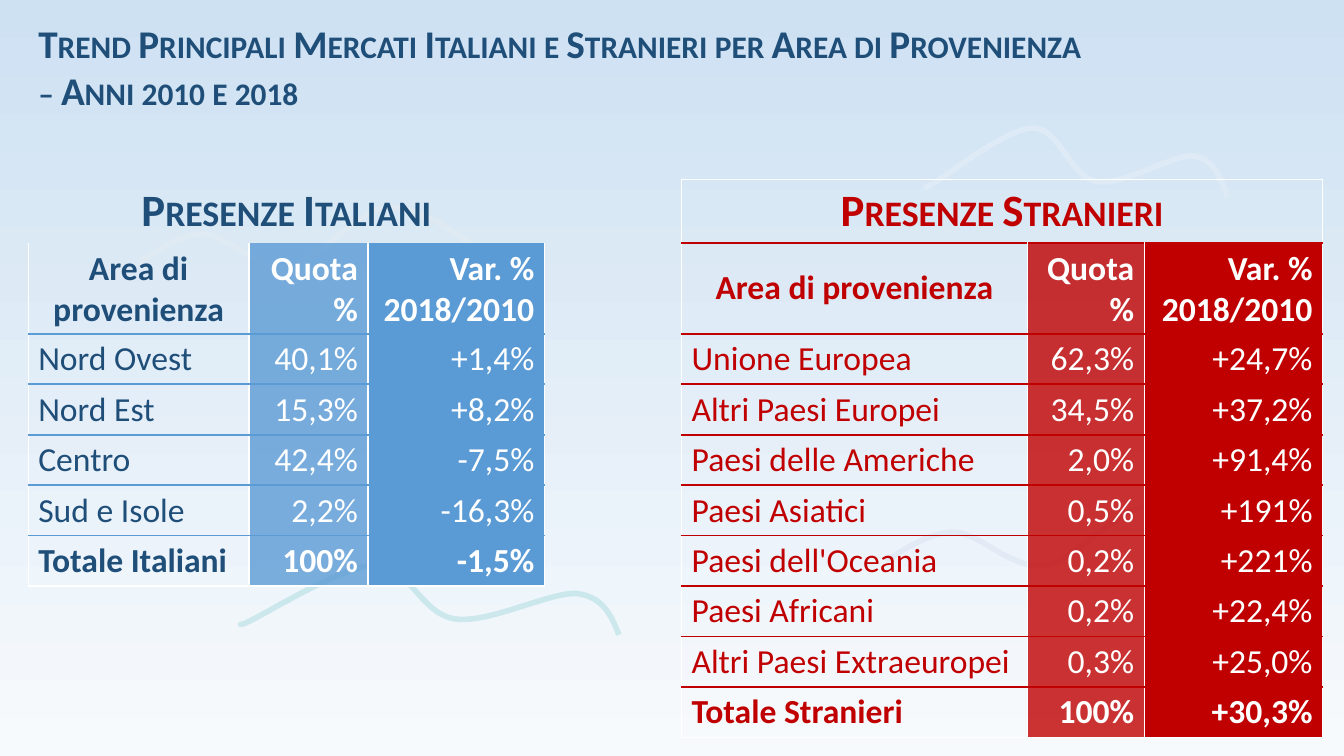
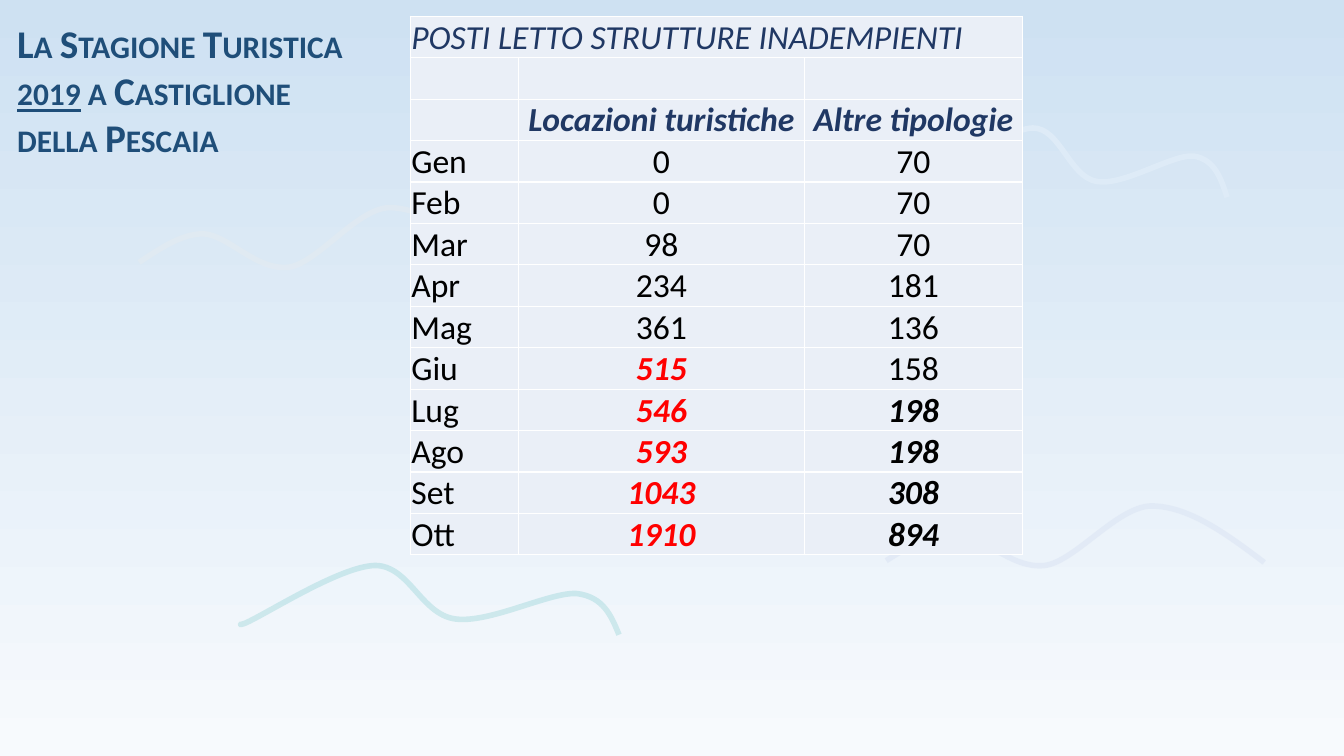
import pptx
import pptx.util
import pptx.dml.color
import pptx.enum.text
import pptx.oxml
import pptx.oxml.ns

C = {"navy": "1F4E79", "indigo": "203864", "blue": "5B9BD5", "crimson": "C00000",
     "red": "FF0000", "black": "000000", "white": "FFFFFF", "cell": "EAEFF7",
     "sky": "CEE1F2", "mist": "F7FAFD", "grey": "EDEDED", "lilac": "DAE3F3",
     "teal": "009999", "ice": "DEEBF7"}
FONT = "Calibri"
W, H = pptx.util.Inches(13.33), pptx.util.Inches(7.5)
LEFT, CENTER, RIGHT = (pptx.enum.text.PP_ALIGN.LEFT, pptx.enum.text.PP_ALIGN.CENTER,
                       pptx.enum.text.PP_ALIGN.RIGHT)
TOP, MIDDLE, BOTTOM = (pptx.enum.text.MSO_ANCHOR.TOP, pptx.enum.text.MSO_ANCHOR.MIDDLE,
                       pptx.enum.text.MSO_ANCHOR.BOTTOM)

# Curves in percent of their box: a start, then three points for each Bezier arc
GENTLE = [(0, 92), (6, 68), (12, 44), (18, 44), (25, 46), (33, 107), (42, 100),
          (50, 93), (61, 2), (70, 0), (80, 0), (90, 47), (100, 95)]
STEEP = [(1, 85), (0, 88), (2, 84), (2, 84), (8, 69), (27, 1), (36, 0), (45, 0),
         (48, 71), (57, 78), (66, 85), (82, 38), (89, 41), (96, 46), (98, 74), (100, 101)]
# Curve, box in percent of the slide, colour, opacity
WAVES = [(GENTLE, (10.35, 27.47, 26.56, 7.87), "grey", 30),
         (GENTLE, (65.94, 66.93, 28.13, 7.87), "lilac", 50),
         (STEEP, (17.7, 74.8, 28.36, 9.07), "teal", 15),
         (STEEP, (68.72, 16.93, 22.58, 9.07), "ice", 100)]

ITALIANS = [("Nord Ovest", "40,1%", "+1,4%"), ("Nord Est", "15,3%", "+8,2%"),
            ("Centro", "42,4%", "-7,5%"), ("Sud e Isole", "2,2%", "-16,3%"),
            ("Totale Italiani", "100%", "-1,5%")]
FOREIGNERS = [("Unione Europea", "62,3%", "+24,7%"), ("Altri Paesi Europei", "34,5%", "+37,2%"),
              ("Paesi delle Americhe", "2,0%", "+91,4%"), ("Paesi Asiatici", "0,5%", "+191%"),
              ("Paesi dell'Oceania", "0,2%", "+221%"), ("Paesi Africani", "0,2%", "+22,4%"),
              ("Altri Paesi Extraeuropei", "0,3%", "+25,0%"),
              ("Totale Stranieri", "100%", "+30,3%")]
BEDS = [("Gen", 0, 70), ("Feb", 0, 70), ("Mar", 98, 70), ("Apr", 234, 181),
        ("Mag", 361, 136), ("Giu", 515, 158), ("Lug", 546, 198), ("Ago", 593, 198),
        ("Set", 1043, 308), ("Ott", 1910, 894)]


def rgb(name):
    return pptx.dml.color.RGBColor.from_string(C[name])


def place(box):
    """Turn percent of the slide into EMU."""
    return [round(v * side / 100) for v, side in zip(box, (W, H, W, H))]


def set_alpha(element, percent):
    for color in element.iter(pptx.oxml.ns.qn("a:srgbClr")):
        alpha = color.makeelement(pptx.oxml.ns.qn("a:alpha"), {"val": str(percent * 1000)})
        color.append(alpha)


def add_text(p, text, size=24, color="navy", bold=False, italic=False,
             underline=False, caps=False, align=LEFT):
    p.alignment = align
    r = p.add_run()
    r.text = text
    f = r.font
    f.name, f.size, f.bold, f.italic = FONT, pptx.util.Pt(size), bold, italic
    f.underline = underline
    f.color.rgb = rgb(color)
    if caps:
        r._r.get_or_add_rPr().set("cap", "small")


# Shared look: background and waves on the master
def add_background(master):
    fill = master.background.fill
    fill.gradient()
    fill.gradient_angle = 90
    for stop, name in zip(fill.gradient_stops, ("mist", "sky")):
        stop.color.rgb = rgb(name)


def curve_segments(element):
    """Turn each three straight segments into one Bezier arc."""
    segments = list(element.iter(pptx.oxml.ns.qn("a:lnTo")))
    for k in range(0, len(segments), 3):
        first, *others = segments[k:k + 3]
        arc = first.makeelement(pptx.oxml.ns.qn("a:cubicBezTo"), {})
        first.addprevious(arc)
        for segment in (first, *others):
            arc.append(segment[0])
            segment.getparent().remove(segment)


def add_wave(s, curve, box, color, opacity):
    x, y, w, h = place(box)
    start, *rest = [(round(x + px * w / 100), round(y + py * h / 100)) for px, py in curve]
    builder = s.shapes.build_freeform(*start)
    builder.add_line_segments(rest, close=False)
    sp = builder.convert_to_shape()
    curve_segments(sp.element)
    sp.shadow.inherit = False
    sp.fill.background()
    sp.line.color.rgb = rgb(color)
    sp.line.width = pptx.util.Pt(4)
    if opacity < 100:
        set_alpha(sp.element, opacity)
    return sp


def add_waves(s, master):
    for n, wave in enumerate(WAVES):
        sp = add_wave(s, *wave)
        sp.element.nvSpPr.cNvPr.id = 20 + n
        master.shapes.element.append(sp.element)


def set_title(s, box, paragraphs):
    """Each paragraph is a list of (text, underlined) runs."""
    sp = s.shapes.title
    sp.left, sp.top, sp.width, sp.height = place(box)
    tf = sp.text_frame
    tf.word_wrap = True
    tf.vertical_anchor = TOP
    tf.auto_size = pptx.enum.text.MSO_AUTO_SIZE.SHAPE_TO_FIT_TEXT
    for n, runs in enumerate(paragraphs):
        p = tf.add_paragraph() if n else tf.paragraphs[0]
        for text, underline in runs:
            add_text(p, text, size=28, bold=True, caps=True, underline=underline)


# Tables
def add_grid(s, box, cols, rows):
    """Add a plain table whose columns and rows share the box by weight."""
    x, y, w, h = place(box)
    table = s.shapes.add_table(len(rows), len(cols), x, y, w, h).table
    table.first_row = table.horz_banding = False
    for col, weight in zip(table.columns, cols):
        col.width = round(w * weight / sum(cols))
    for row, weight in zip(table.rows, rows):
        row.height = round(h * weight / sum(rows))
    table.cell(0, 0).merge(table.cell(0, len(cols) - 1))
    return table


def style_cell(cell, edges, fill=None, opacity=100, anchor=TOP):
    """Edges maps L, R, T, B to (colour, points); a missing side has no line."""
    tcPr = cell._tc.get_or_add_tcPr()
    for side in "LRTB":
        color, width = edges.get(side, (None, 0))
        paint = (f'<a:solidFill><a:srgbClr val="{C[color]}"/></a:solidFill>'
                 if color else "<a:noFill/>")
        tcPr.append(pptx.oxml.parse_xml(
            f'<a:ln{side} {pptx.oxml.ns.nsdecls("a")} w="{round(width * 12700)}">'
            f'{paint}</a:ln{side}>'))
    cell.vertical_anchor = anchor
    if fill:
        cell.fill.solid()
        cell.fill.fore_color.rgb = rgb(fill)
        if opacity < 100:
            set_alpha(tcPr.find(pptx.oxml.ns.qn("a:solidFill")), opacity)
    else:
        cell.fill.background()


def add_market_table(s, box, cols, heading, data, ink, accent, framed):
    header = ("Area di provenienza", "Quota %", "Var. % 2018/2010")
    table = add_grid(s, box, cols, [0.63, 0.9] + [0.5] * len(data))
    thin, rule = ("white", 1), (accent, 1.5)
    frame = {"L": thin, "R": thin, "T": thin, "B": rule} if framed else {}
    title = table.cell(0, 0)
    style_cell(title, frame, anchor=MIDDLE)
    add_text(title.text_frame.paragraphs[0], heading, size=32, color=ink, bold=True,
             caps=True, align=CENTER)
    for i, row in enumerate([header, *data], 1):
        is_header, is_total = i == 1, i == len(data) + 1
        edges = {"L": thin, "R": thin, "T": rule, "B": thin if is_total else rule}
        if is_header and not framed:
            del edges["T"]
        for j, text in enumerate(row):
            cell = table.cell(i, j)
            style_cell(cell, edges, accent if j else None, 80 if j == 1 else 100,
                       MIDDLE if is_header else TOP)
            align = RIGHT if j else CENTER if is_header else LEFT
            add_text(cell.text_frame.paragraphs[0], text, color="white" if j else ink,
                     bold=is_header or is_total, align=align)


def bed_format(i, j, value):
    """Text format of a cell in the beds table."""
    if i < 3:
        return {"color": "indigo", "italic": True, "bold": i == 2}
    strong = j > 0 and value > (500, 190)[j - 1]
    return {"color": "red" if strong and j == 1 else "black", "bold": strong, "italic": strong}


def add_beds_table(s, box):
    rows = [("POSTI LETTO STRUTTURE INADEMPIENTI", "", ""), ("", "", ""),
            ("", "Locazioni turistiche", "Altre tipologie"), *BEDS]
    table = add_grid(s, box, [1.07, 2.84, 2.16], [1] * len(rows))
    edges = dict.fromkeys("LRTB", ("white", 1))
    for i, row in enumerate(rows):
        for j, value in enumerate(row):
            cell = table.cell(i, j)
            style_cell(cell, edges, "cell", anchor=BOTTOM)
            cell.margin_left = cell.margin_right = cell.margin_top = pptx.util.Inches(0.01)
            cell.margin_bottom = 0
            if value != "":
                add_text(cell.text_frame.paragraphs[0], str(value),
                         align=CENTER if j else LEFT, **bed_format(i, j, value))


# Slides
def market_slide(s):
    set_title(s, (2.1, 1.87, 94.07, 13.87), [
        [("Trend Principali Mercati Italiani e Stranieri per Area di Provenienza", False)],
        [("– Anni 2010 e 2018", False)]])
    add_market_table(s, (2.1, 23.7, 38.41, 53.73), [2.19, 1.18, 1.75],
                     "Presenze Italiani", ITALIANS, "navy", "blue", framed=False)
    add_market_table(s, (50.71, 23.7, 47.71, 73.73), [3.43, 1.16, 1.77],
                     "Presenze Stranieri", FOREIGNERS, "crimson", "crimson", framed=True)


def season_slide(s):
    set_title(s, (0.53, 1.87, 26.11, 20.13), [
        [("La Stagione Turistica ", False), ("2019", True),
         (" a Castiglione della Pescaia", False)]])
    add_beds_table(s, (30.53, 2.15, 45.54, 71.3))


def main():
    prs = pptx.Presentation()
    prs.slide_width, prs.slide_height = W, H
    add_background(prs.slide_master)
    slides = [prs.slides.add_slide(prs.slide_layouts[5]) for _ in range(2)]
    add_waves(slides[0], prs.slide_master)
    for build, s in zip((market_slide, season_slide), slides):
        build(s)
    prs.save("out.pptx")


if __name__ == "__main__":
    main()
